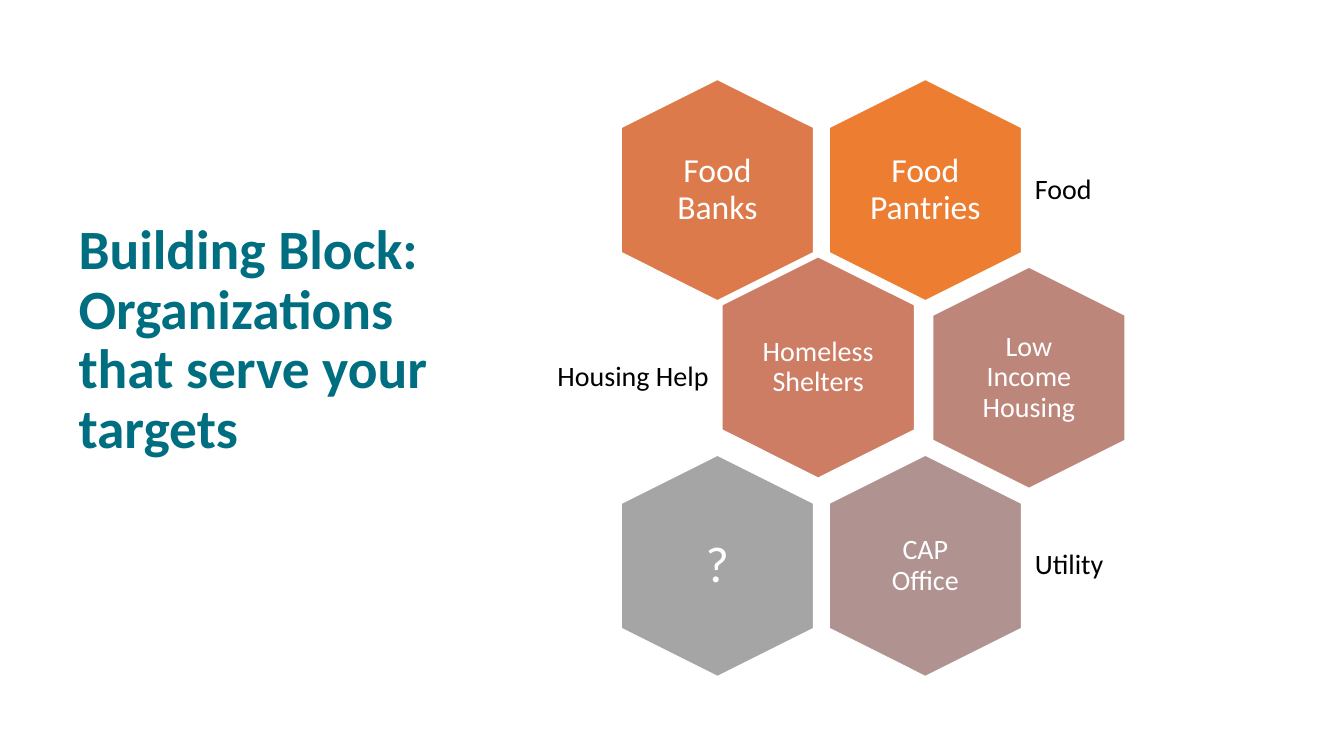
from pptx import Presentation
from pptx.dml.color import RGBColor
from pptx.enum.shapes import MSO_SHAPE as Shape
from pptx.enum.text import MSO_ANCHOR as Anchor, MSO_AUTO_SIZE as AutoSize, PP_ALIGN as Align
from pptx.util import Cm, Pt

HEXAGON_LENGTH, HEXAGON_WIDTH = 5.58, 4.85
CAPTION_WIDTH, CAPTION_HEIGHT = 3.35, 3.84
LABEL_HEIGHT = 3.35
TOP_ROW, MIDDLE_ROW, BOTTOM_ROW = 4.79, 9.52, 14.26
LEFT_COLUMN, RIGHT_COLUMN = 18.08, 23.32

# centre x, centre y, fill, caption, text size
HEXAGONS = [
    (RIGHT_COLUMN, TOP_ROW, "ED7D31", "Food Pantries", 24),
    (LEFT_COLUMN, TOP_ROW, "DC7A4B", "Food Banks", 24),
    (20.62, 9.26, "CC7D64", "Homeless Shelters", 20),
    (25.93, MIDDLE_ROW, "BD867B", "Low Income Housing", 20),
    (RIGHT_COLUMN, BOTTOM_ROW, "B09391", "CAP Office", 20),
    (LEFT_COLUMN, BOTTOM_ROW, "A5A5A5", "?", 36),
]

# left, centre y, width, text, alignment
LABELS = [
    (25.88, TOP_ROW, 6.22, "Food", Align.LEFT),
    (12.04, MIDDLE_ROW, 6.02, "Housing Help", Align.RIGHT),
    (25.88, BOTTOM_ROW, 6.22, "Utility", Align.LEFT),
]


def color(value):
    return RGBColor.from_string(value)


def set_attributes(target, values):
    for name, value in values.items():
        setattr(target, name, value)


def add_text(slide, box, lines, size, font_color, align=Align.LEFT,
             anchor=Anchor.MIDDLE, bold=False, margins=(0.2, 0.2)):
    """Add one paragraph; box is left, top, width, height in centimetres."""
    shape = slide.shapes.add_textbox(*map(Cm, box))
    horizontal, vertical = map(Cm, margins)
    frame = shape.text_frame
    set_attributes(frame, {
        "word_wrap": True, "auto_size": AutoSize.NONE, "vertical_anchor": anchor,
        "margin_left": horizontal, "margin_right": horizontal,
        "margin_top": vertical, "margin_bottom": vertical,
    })
    paragraph = frame.paragraphs[0]
    set_attributes(paragraph, {"alignment": align, "line_spacing": 0.9})
    for index, line in enumerate(lines):
        if index:
            paragraph.add_line_break()
        run = paragraph.add_run()
        run.text = line
        set_attributes(run.font, {"name": "Calibri", "size": Pt(size), "bold": bold})
        run.font.color.rgb = color(font_color)


def add_hexagon(slide, center_x, center_y, fill, caption, size):
    shape = slide.shapes.add_shape(
        Shape.HEXAGON,
        Cm(center_x - HEXAGON_LENGTH / 2), Cm(center_y - HEXAGON_WIDTH / 2),
        Cm(HEXAGON_LENGTH), Cm(HEXAGON_WIDTH))
    shape.rotation = 90
    shape.adjustments[0] = 0.25
    shape.shadow.inherit = False
    shape.fill.solid()
    shape.fill.fore_color.rgb = color(fill)
    shape.line.color.rgb = color("FFFFFF")
    shape.line.width = Pt(1)
    box = (center_x - CAPTION_WIDTH / 2, center_y - CAPTION_HEIGHT / 2,
           CAPTION_WIDTH, CAPTION_HEIGHT)
    add_text(slide, box, [caption], size, "FFFFFF", Align.CENTER)


def add_label(slide, left, center_y, width, text, align):
    box = (left, center_y - LABEL_HEIGHT / 2, width, LABEL_HEIGHT)
    add_text(slide, box, [text], 20, "000000", align)


def main():
    presentation = Presentation()
    set_attributes(presentation, {"slide_width": Cm(33.87), "slide_height": Cm(19.05)})
    slide = presentation.slides.add_slide(presentation.slide_layouts[6])
    add_text(slide, (1.73, 7.29, 10.92, 4.45),
             ["Building Block:", "Organizations that serve your targets"],
             39.6, "006E81", anchor=Anchor.BOTTOM, bold=True, margins=(0.25, 0.13))
    for hexagon in HEXAGONS:
        add_hexagon(slide, *hexagon)
    for label in LABELS:
        add_label(slide, *label)
    presentation.save("out.pptx")


if __name__ == "__main__":
    main()
